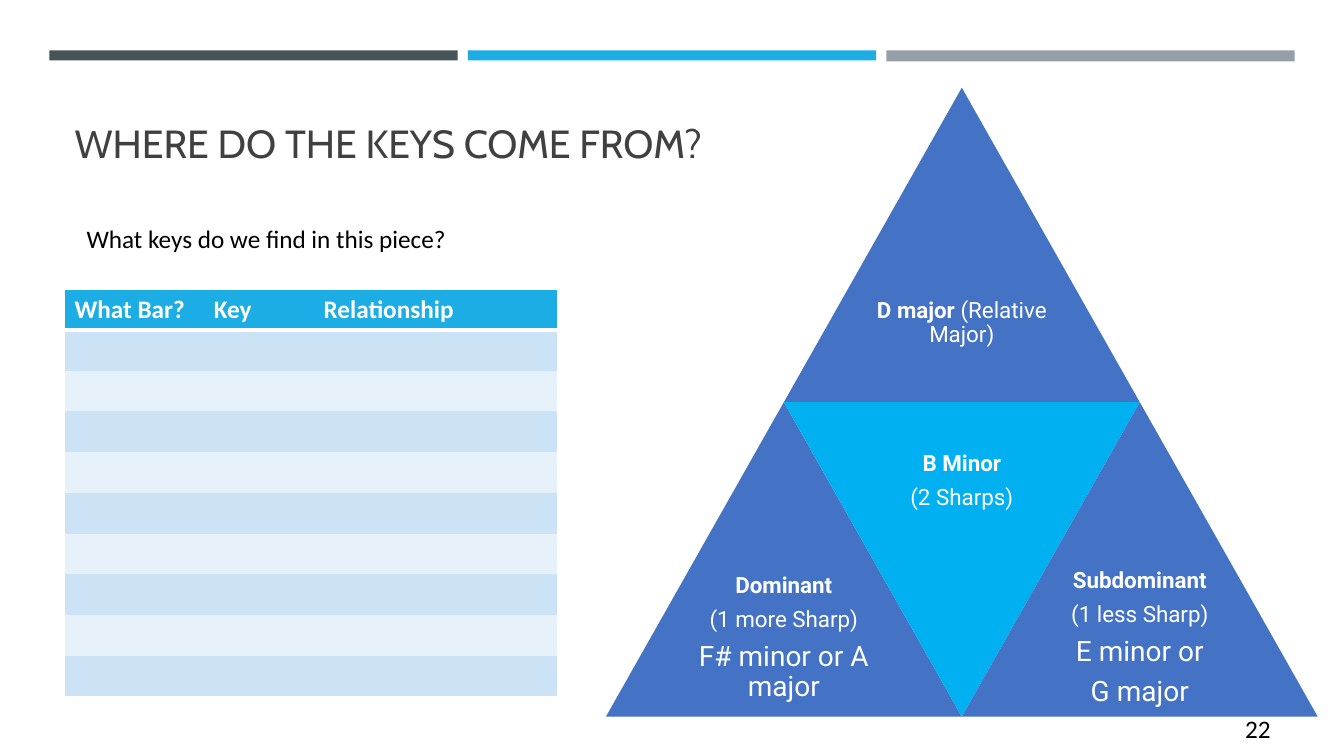
from lxml import etree
from pptx import Presentation
from pptx.dml.color import RGBColor
from pptx.enum.shapes import MSO_SHAPE as Preset
from pptx.enum.text import MSO_ANCHOR as Anchor, MSO_AUTO_SIZE as AutoSize, PP_ALIGN as Align
from pptx.oxml.ns import qn
from pptx.util import Inches, Pt

COLORS = {
    "slate": "465359", "sky": "1CADE4", "gray": "969FA7", "title": "404040",
    "blue": "4472C4", "cyan": "00B0F0", "white": "FFFFFF", "black": "000000",
    "band_dark": "CCE3F5", "band_light": "E7F1FA",
}
NO_GRID_STYLE = "{2D5ABB26-0587-4C30-8999-92F81FD0307C}"
HEADERS = ["What Bar?", "Key", "Relationship"]
COLUMN_WIDTHS = [1.38, 1.09, 2.42]
ROW_COUNT = 10
APEX_X, APEX_Y = 9.54, 0.87
HALF_WIDTH, HEIGHT = 1.765, 3.12
MIDDLE_Y = APEX_Y + HEIGHT


def rgb(name):
    """Return the named colour."""
    return RGBColor.from_string(COLORS[name])


def assign(target, **values):
    """Set each given attribute on the target."""
    for name, value in values.items():
        setattr(target, name, value)


def paint(shape, color):
    """Give a shape a plain fill with no line or shadow."""
    shape.shadow.inherit = False
    shape.fill.solid()
    shape.fill.fore_color.rgb = rgb(color)
    shape.line.fill.background()


def write_span(para, text, size, color, font="Calibri", bold=False):
    """Append one formatted run to a paragraph."""
    span = para.add_run()
    span.text = text
    assign(span.font, name=font, size=Pt(size), bold=bold)
    span.font.color.rgb = rgb(color)


def add_bar(page, left, width, height, color):
    """Draw one bar of the top band."""
    bar = page.shapes.add_shape(Preset.RECTANGLE, Inches(left), Inches(0.5), Inches(width), Inches(height))
    paint(bar, color)


def set_title(page, text):
    """Place and format the title placeholder."""
    title = page.shapes.title
    assign(title, left=Inches(0.64), top=Inches(0.77), width=Inches(12.06), height=Inches(1.3))
    assign(title.text_frame, vertical_anchor=Anchor.MIDDLE, word_wrap=True, auto_size=AutoSize.NONE)
    para = title.text_frame.paragraphs[0]
    para.alignment = Align.LEFT
    write_span(para, text, 28, "title", "Cabin")


def add_label(page, place, text, anchor=Anchor.TOP, align=Align.LEFT):
    """Add a one-line text box."""
    box = page.shapes.add_textbox(*map(Inches, place))
    assign(box.text_frame, word_wrap=True, vertical_anchor=anchor)
    para = box.text_frame.paragraphs[0]
    para.alignment = align
    write_span(para, text, 18, "black")


def add_triangle(page, center, top, color, lines, inverted=False):
    """Draw a triangle holding paragraphs of (text, size, bold) spans."""
    base, tip = (top, top + HEIGHT) if inverted else (top + HEIGHT, top)
    corners = [(center - HALF_WIDTH, base), (center, tip), (center + HALF_WIDTH, base)]
    points = [(Inches(x), Inches(y)) for x, y in corners]
    builder = page.shapes.build_freeform(*points[0])
    builder.add_line_segments(points[1:], close=True)
    triangle = builder.convert_to_shape()
    paint(triangle, color)
    above, below = (0.07, 1.63) if inverted else (1.63, 0.07)
    frame = triangle.text_frame
    assign(frame, word_wrap=True, vertical_anchor=Anchor.MIDDLE,
           margin_left=Inches(0.85), margin_right=Inches(0.85),
           margin_top=Inches(above), margin_bottom=Inches(below))
    for index, spans in enumerate(lines):
        para = frame.add_paragraph() if index else frame.paragraphs[0]
        assign(para, alignment=Align.CENTER, line_spacing=0.9, space_after=Pt(7))
        for text, size, bold in spans:
            write_span(para, text, size, "white", "Roboto", bold)


def add_border(cell, side, points):
    """Draw a white border on one side of a cell."""
    properties = cell._tc.get_or_add_tcPr()
    line = etree.SubElement(properties, qn(f"a:ln{side}"), w=str(Pt(points)))
    fill = etree.SubElement(line, qn("a:solidFill"))
    etree.SubElement(fill, qn("a:srgbClr"), val=COLORS["white"])


def add_key_table(page):
    """Add the banded table for the keys of the piece."""
    frame = page.shapes.add_table(ROW_COUNT, len(HEADERS), Inches(0.64), Inches(2.87), Inches(4.89), Inches(4.04))
    table = frame.table
    table._tbl.tblPr.find(qn("a:tableStyleId")).text = NO_GRID_STYLE
    table.horz_banding = False
    for column, width in zip(table.columns, COLUMN_WIDTHS):
        column.width = Inches(width)
    last_row, last_column = ROW_COUNT - 1, len(HEADERS) - 1
    for row in range(ROW_COUNT):
        for column, header in enumerate(HEADERS):
            cell = table.cell(row, column)
            edges = [("L", column == 0, 1), ("R", column == last_column, 1),
                     ("T", row == 0, 1), ("B", row in (0, last_row), 1 if row else 3)]
            for side, shown, points in edges:
                if shown:
                    add_border(cell, side, points)
            color = "sky" if row == 0 else "band_dark" if row % 2 else "band_light"
            cell.fill.solid()
            cell.fill.fore_color.rgb = rgb(color)
            if row == 0:
                write_span(cell.text_frame.paragraphs[0], header, 18, "white", bold=True)


def main():
    """Build the slide and save it."""
    deck = Presentation()
    assign(deck, slide_width=Inches(13.33), slide_height=Inches(7.5))
    page = deck.slides.add_slide(deck.slide_layouts[5])
    for index, (color, height) in enumerate([("slate", 0.1), ("sky", 0.1), ("gray", 0.11)]):
        add_bar(page, 0.49 + index * 4.15, 4.05, height, color)
    set_title(page, "WHERE DO THE KEYS COME FROM?")
    add_triangle(page, APEX_X, APEX_Y, "blue", [
        [("D major ", 16, True), ("(Relative Major)", 16, False)]])
    add_triangle(page, APEX_X - HALF_WIDTH, MIDDLE_Y, "blue", [
        [("Dominant", 16, True)], [("(1 more Sharp)", 16, False)],
        [("F# minor or A major", 20, False)]])
    add_triangle(page, APEX_X, MIDDLE_Y, "cyan", [
        [("B Minor", 16, True)], [("(2 Sharps)", 16, False)]], inverted=True)
    add_triangle(page, APEX_X + HALF_WIDTH, MIDDLE_Y, "blue", [
        [("Subdominant", 16, True)], [("(1 less Sharp)", 16, False)],
        [("E minor or", 20, False)], [("G major", 20, False)]])
    add_label(page, (0.76, 2.17, 5.05, 0.4), "What keys do we find in this piece?")
    add_key_table(page)
    add_label(page, (11.55, 7.03, 1.15, 0.4), "22", Anchor.MIDDLE, Align.RIGHT)
    deck.save("out.pptx")


if __name__ == "__main__":
    main()
